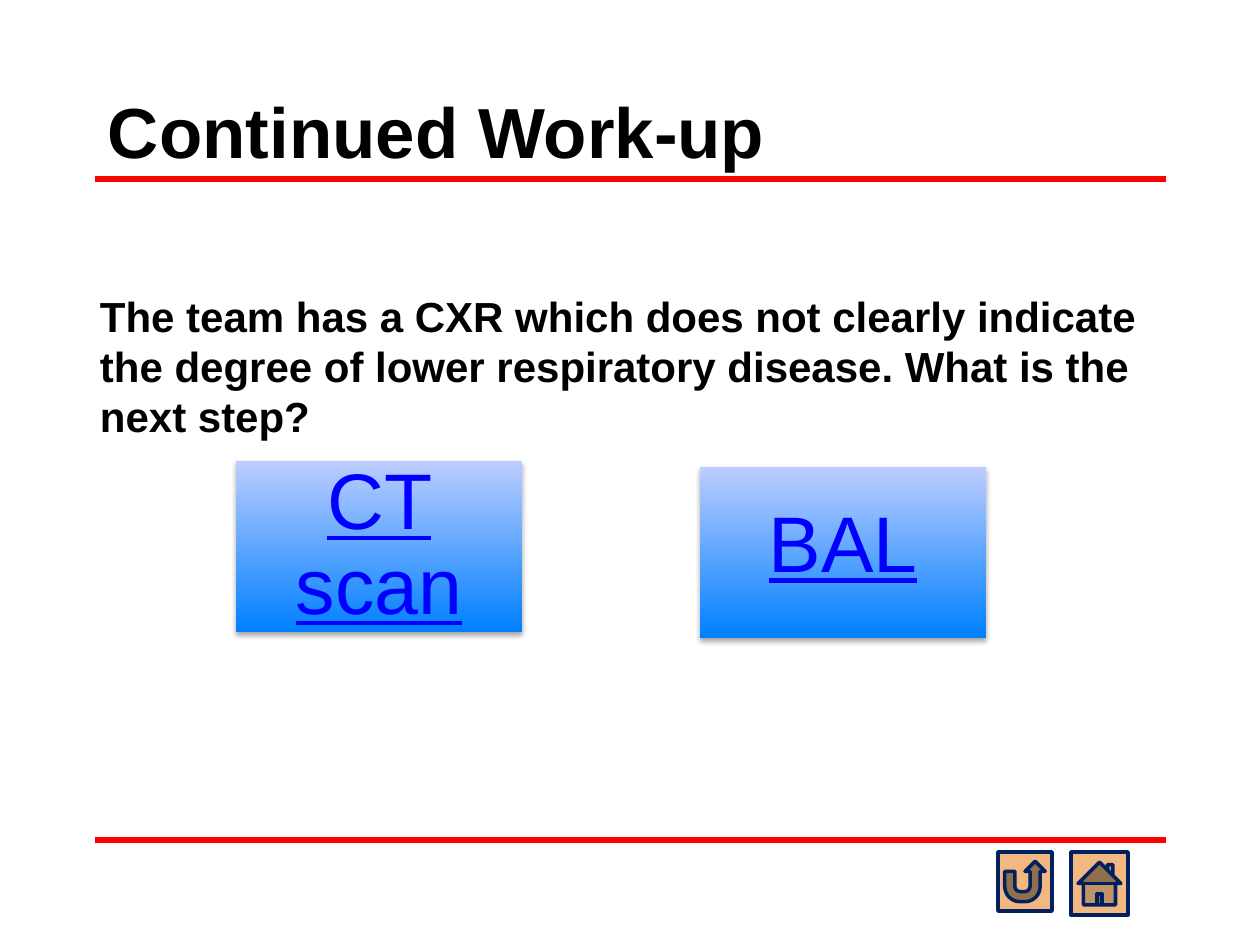
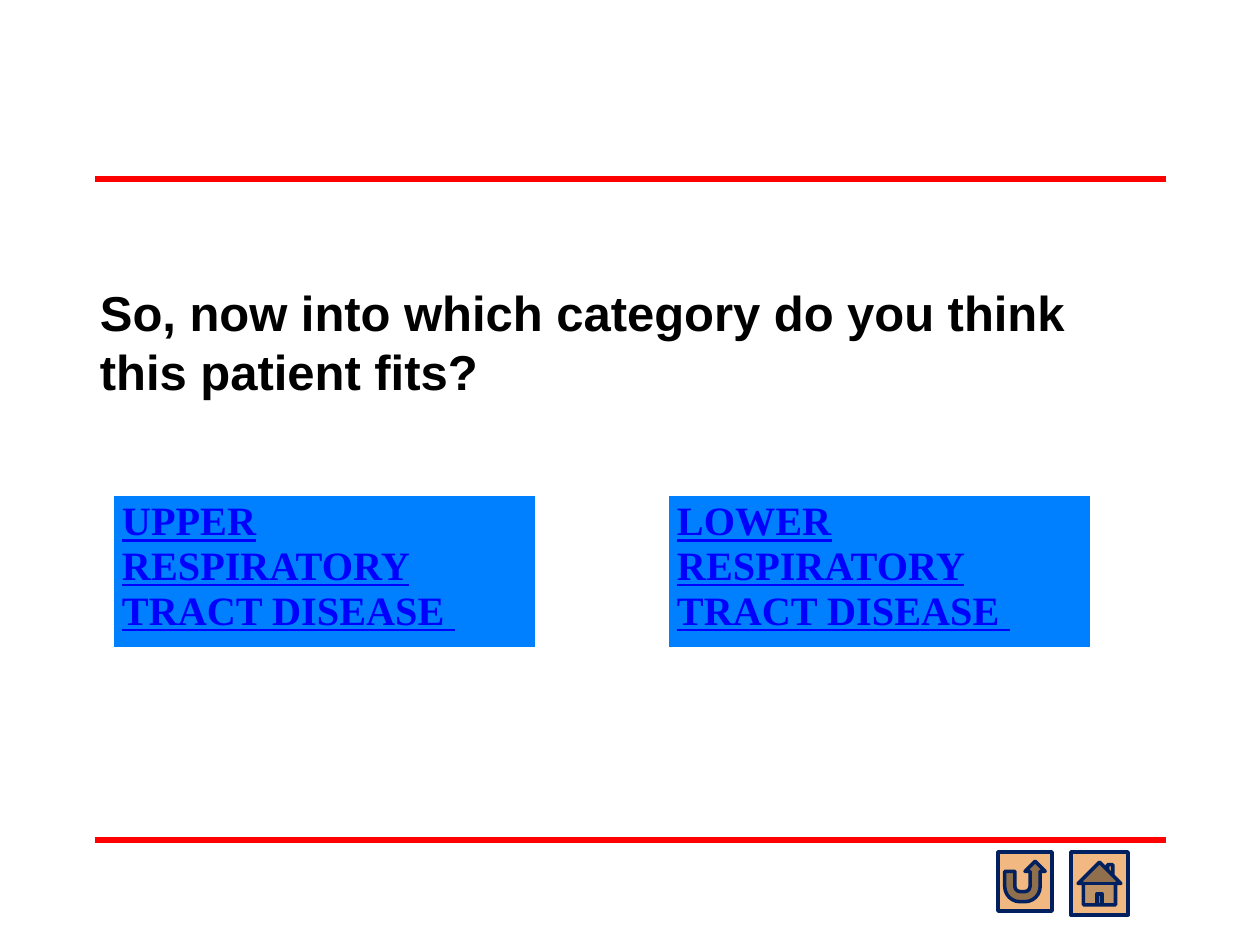
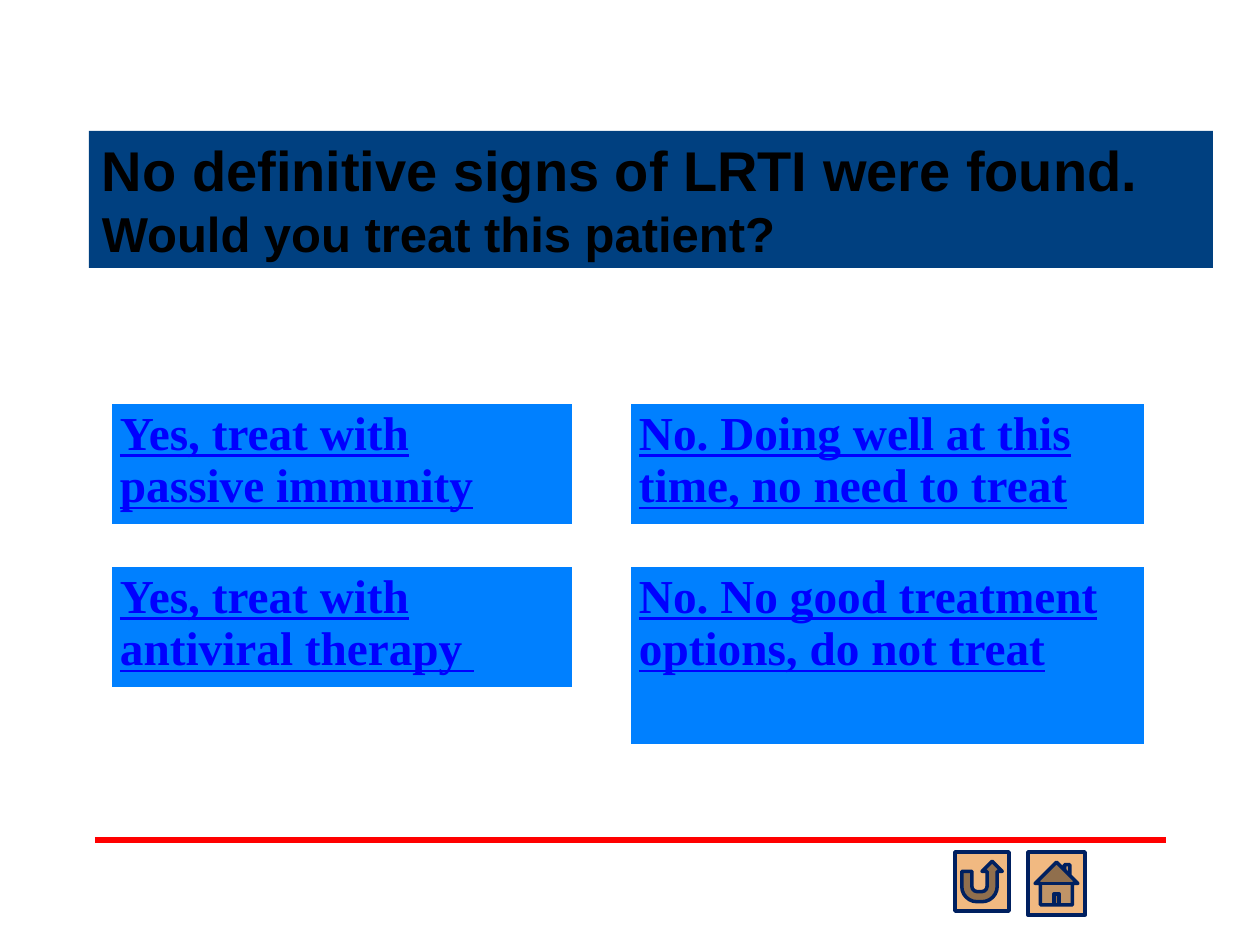
from lxml import etree
from pptx import Presentation
from pptx.dml.color import RGBColor
from pptx.enum.shapes import MSO_CONNECTOR, MSO_SHAPE
from pptx.enum.text import MSO_ANCHOR, PP_ALIGN
from pptx.oxml import parse_xml
from pptx.oxml.ns import nsdecls, qn
from pptx.util import Pt

EMU_PER_PX = 914400 / 126
BLANK_LAYOUT = 6

RECTANGLE = MSO_SHAPE.RECTANGLE
HOME, RETURN = MSO_SHAPE.ACTION_BUTTON_HOME, MSO_SHAPE.ACTION_BUTTON_RETURN
STRAIGHT = MSO_CONNECTOR.STRAIGHT
TOP, MIDDLE, BOTTOM = MSO_ANCHOR.TOP, MSO_ANCHOR.MIDDLE, MSO_ANCHOR.BOTTOM
CENTER = PP_ALIGN.CENTER

BLACK = RGBColor(0x00, 0x00, 0x00)
RULE_RED = RGBColor(0xFF, 0x00, 0x00)
LINK_BLUE = RGBColor(0x00, 0x00, 0xFF)
ANSWER_BLUE = RGBColor(0x00, 0x80, 0xFF)
PALE_BLUE = RGBColor(0xBD, 0xCD, 0xFF)
BAND_NAVY = RGBColor(0x00, 0x40, 0x80)
BUTTON_PEACH = RGBColor(0xF1, 0xB9, 0x81)
BUTTON_NAVY = RGBColor(0x00, 0x20, 0x60)

SANS, SERIF = "Arial", "Times New Roman"

RULE_LEFT, RULE_RIGHT = 95, 1166
HEADER_RULE, FOOTER_RULE = 179, 840
NAVIGATION_TOP = 852
HOME_SIZE, RETURN_SIZE, HOME_OFFSET = (57, 63), (54, 59), 73
CHOICE_SIZE = (286, 171)

# Headings: box, anchor, fill, lines of (text, size)
# Choices: text, left, rectangle top, label top
# Answers: size, columns (left, width), rows (top, (text, height) per column)
SLIDES = [
    {
        "rules": [HEADER_RULE, FOOTER_RULE],
        "headings": [
            ((95, 53, 1071, 126), BOTTOM, None, [("Continued Work-up", 40.5)]),
            ((87, 284, 1086, 105), TOP, None, [
                ("The team has a CXR which does not clearly indicate the degree of "
                 "lower respiratory disease. What is the next step?", 24)]),
        ],
        "choices": [("BAL", 700, 467, 461), ("CT scan", 236, 461, 461)],
        "navigation_left": 998,
    },
    {
        "rules": [HEADER_RULE, FOOTER_RULE],
        "headings": [
            ((87, 156, 1086, 250), BOTTOM, None, [
                ("So, now into which category do you think this patient fits?", 28)]),
        ],
        "answers": {
            "size": 23,
            "columns": [(113, 423), (668, 423)],
            "rows": [(495, [("UPPER RESPIRATORY TRACT DISEASE ", 151),
                            ("LOWER RESPIRATORY TRACT DISEASE ", 151)])],
        },
        "navigation_left": 998,
    },
    {
        "rules": [FOOTER_RULE],
        "headings": [
            ((89, 131, 1124, 137), BOTTOM, BAND_NAVY, [
                ("No definitive signs of LRTI were found.", 32),
                ("Would you treat this patient?", 28)]),
        ],
        "answers": {
            "size": 27,
            "columns": [(111, 462), (630, 515)],
            "rows": [(403, [("Yes, treat with passive immunity", 122),
                            ("No. Doing well at this time, no need to treat", 122)]),
                     (566, [("Yes, treat with antiviral therapy ", 122),
                            ("No. No good treatment options, do not treat", 180)])],
        },
        "navigation_left": 955,
    },
]


def px(*lengths):
    return [round(length * EMU_PER_PX) for length in lengths]


def add_run(paragraph, text, size, font_name, color, bold=False, underline=False):
    run = paragraph.add_run()
    run.text = text
    font = run.font
    font.size, font.name, font.bold = Pt(size), font_name, bold
    font.color.rgb = color
    if underline:
        font.underline = True


def set_margins(target, horizontal, vertical):
    target.margin_left = target.margin_right = px(horizontal)[0]
    target.margin_top = target.margin_bottom = px(vertical)[0]


def add_text_box(shapes, box, anchor, vertical_margin):
    shape = shapes.add_textbox(*px(*box))
    frame = shape.text_frame
    frame.word_wrap = True
    frame.vertical_anchor = anchor
    set_margins(frame, 13, vertical_margin)
    return shape


def add_rule(slide, y):
    rule = slide.shapes.add_connector(STRAIGHT, *px(RULE_LEFT, y, RULE_RIGHT, y))
    rule.line.color.rgb = RULE_RED
    rule.line.width = Pt(3)
    etree.SubElement(rule._element.spPr, qn("a:effectLst"))


def add_heading(slide, box, anchor, fill, lines):
    shape = add_text_box(slide.shapes, box, anchor, 6)
    if fill is not None:
        shape.fill.solid()
        shape.fill.fore_color.rgb = fill
    paragraph = shape.text_frame.paragraphs[0]
    for index, (text, size) in enumerate(lines):
        if index:
            paragraph.add_line_break()
        add_run(paragraph, text, size, SANS, BLACK, bold=True)


def add_choice(slide, text, left, top, label_top):
    """Add a gradient rectangle grouped with its link label."""
    group = slide.shapes.add_group_shape()
    rectangle = group.shapes.add_shape(RECTANGLE, *px(left, top, *CHOICE_SIZE))
    rectangle.line.fill.background()
    rectangle.fill.gradient()
    rectangle.fill.gradient_angle = 90
    for stop, color, position in zip(rectangle.fill.gradient_stops,
                                     (ANSWER_BLUE, PALE_BLUE), (0, 1)):
        stop.color.rgb = color
        stop.position = position
    rectangle._element.spPr.append(parse_xml(
        f'<a:effectLst {nsdecls("a")}>'
        f'<a:outerShdw blurRad="{Pt(3.1)}" dist="{Pt(1.8)}" dir="5400000" rotWithShape="0">'
        '<a:srgbClr val="000000"><a:alpha val="35000"/></a:srgbClr>'
        '</a:outerShdw></a:effectLst>'))

    label = add_text_box(group.shapes, (left, label_top, *CHOICE_SIZE), MIDDLE, 13)
    paragraph = label.text_frame.paragraphs[0]
    paragraph.alignment = CENTER
    paragraph.line_spacing = 0.9
    add_run(paragraph, text, 45, SANS, LINK_BLUE, underline=True)


def add_answer(slide, text, size, box):
    """Add a one-cell table with white borders."""
    table = slide.shapes.add_table(1, 1, *px(*box)).table
    table.first_row = table.horz_banding = False
    cell = table.cell(0, 0)
    set_margins(cell, 9, 5)
    properties = cell._tc.get_or_add_tcPr()
    for side, width in (("L", 1), ("R", 1), ("T", 1), ("B", 3)):
        properties.append(parse_xml(
            f'<a:ln{side} {nsdecls("a")} w="{Pt(width)}"><a:solidFill>'
            f'<a:srgbClr val="FFFFFF"/></a:solidFill></a:ln{side}>'))
    cell.fill.solid()
    cell.fill.fore_color.rgb = ANSWER_BLUE
    add_run(cell.text_frame.paragraphs[0], text, size, SERIF, LINK_BLUE,
            bold=True, underline=True)


def add_answers(slide, size, columns, rows):
    for top, answers in rows:
        for (left, width), (text, height) in zip(columns, answers):
            add_answer(slide, text, size, (left, top, width, height))


def add_navigation(slide, left):
    for kind, button_left, button_size in ((HOME, left + HOME_OFFSET, HOME_SIZE),
                                           (RETURN, left, RETURN_SIZE)):
        button = slide.shapes.add_shape(kind, *px(button_left, NAVIGATION_TOP, *button_size))
        button.shadow.inherit = False
        button.fill.solid()
        button.fill.fore_color.rgb = BUTTON_PEACH
        button.line.color.rgb = BUTTON_NAVY
        button.line.width = Pt(2)


def main():
    presentation = Presentation()
    presentation.slide_width, presentation.slide_height = px(1260, 945)
    for content in SLIDES:
        slide = presentation.slides.add_slide(presentation.slide_layouts[BLANK_LAYOUT])
        for y in content["rules"]:
            add_rule(slide, y)
        for heading in content["headings"]:
            add_heading(slide, *heading)
        for choice in content.get("choices", []):
            add_choice(slide, *choice)
        if "answers" in content:
            add_answers(slide, **content["answers"])
        add_navigation(slide, content["navigation_left"])
    presentation.save("out.pptx")


if __name__ == "__main__":
    main()
